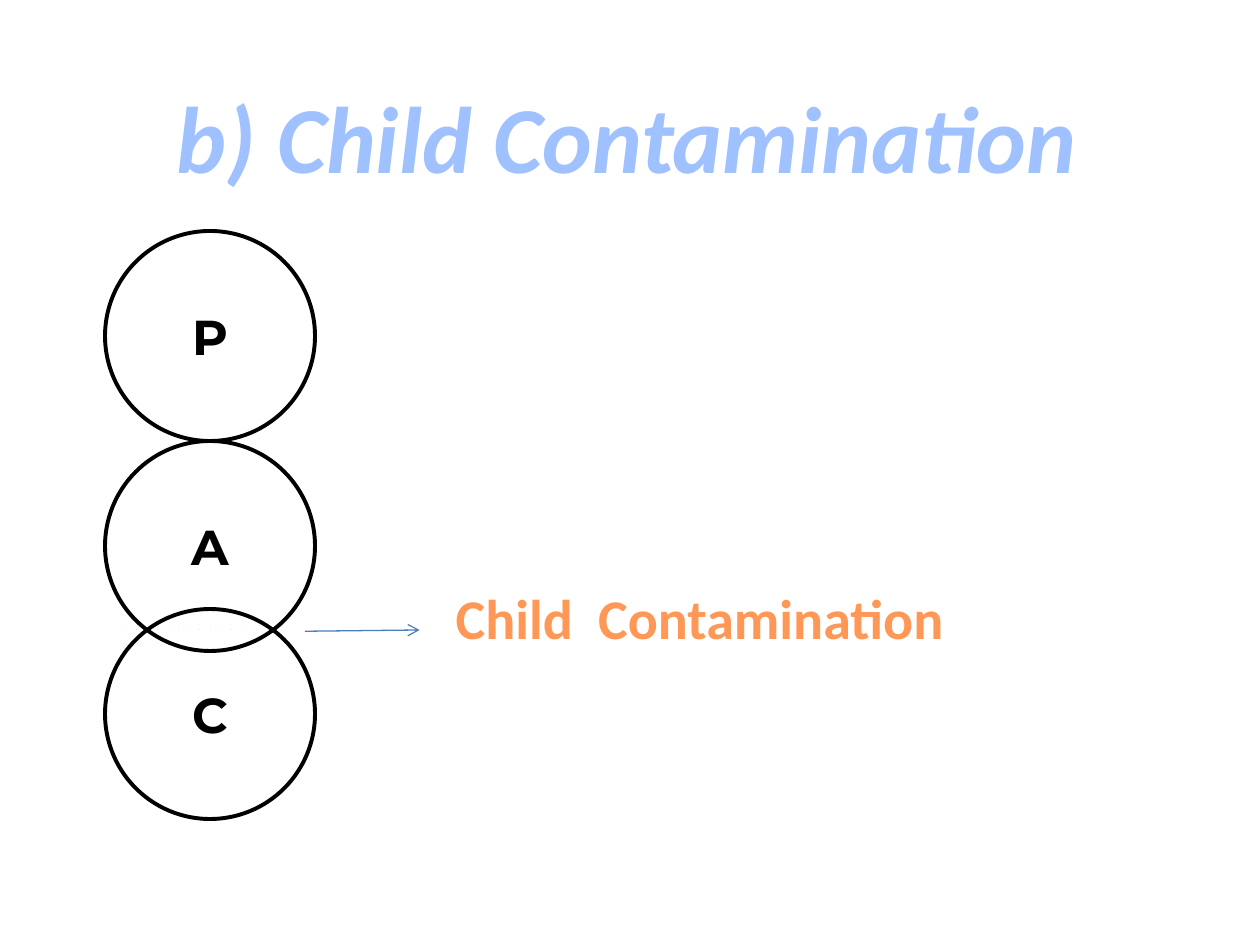
"""Builds the slide on child contamination of the Parent, Adult and Child ego states."""
from dataclasses import dataclass
from math import asin, cos, sin, sqrt

from lxml import etree
from pptx import Presentation
from pptx import util as u
from pptx.dml.color import RGBColor
from pptx.enum import dml, shapes, text
from pptx.oxml.ns import qn


@dataclass(frozen=True)
class Font:
    name: str
    size: int
    color: str
    italic: bool = False


@dataclass(frozen=True)
class Theme:
    title: Font = Font("Calibri", 54, "A0C1FF", italic=True)
    label: Font = Font("Calibri", 32, "FF9856")
    letter: Font = Font("Montserrat", 28, "000000")
    ink: str = "000000"
    paper: str = "FFFFFF"
    arrow: str = "4B7EBC"
    outline: float = 2.25
    arrow_width: float = 0.75


@dataclass(frozen=True)
class EgoState:
    letter: str
    center_y: float


@dataclass(frozen=True)
class Caption:
    words: str
    left: float
    top: float
    width: float
    height: float
    font: Font


THEME = Theme()
RADIUS = 5 / 6
CENTER_X = 5 / 3
PARENT = EgoState("P", 8 / 3)
ADULT = EgoState("A", PARENT.center_y + 2 * RADIUS)
CHILD = EgoState("C", ADULT.center_y + 4 / 3)
CAPTIONS = (
    Caption("b) Child Contamination", 1.25, 0.58, 7.45, 1.01, THEME.title),
    Caption("Child  Contamination", 3.5, 4.58, 4.11, 0.64, THEME.label),
)


def rgb(color: str) -> RGBColor:
    return RGBColor.from_string(color)


def write(box, words: str, font: Font):
    frame = box.text_frame
    frame.word_wrap = False
    para = frame.paragraphs[0]
    para.alignment = text.PP_ALIGN.CENTER
    span = para.add_run()
    span.text = words
    span.font.name = font.name
    span.font.size = u.Pt(font.size)
    span.font.bold = True
    span.font.italic = font.italic
    span.font.color.rgb = rgb(font.color)
    return para


def add_arrow(page, start: tuple[float, float], end: tuple[float, float]) -> None:
    ends = [u.Inches(value) for value in (*start, *end)]
    arrow = page.shapes.add_connector(shapes.MSO_CONNECTOR.STRAIGHT, *ends)
    arrow.line.color.rgb = rgb(THEME.arrow)
    arrow.line.width = u.Pt(THEME.arrow_width)
    etree.SubElement(arrow.line._get_or_add_ln(), qn("a:tailEnd"), type="arrow")
    etree.SubElement(arrow._element.spPr, qn("a:effectLst"))


def add_overlap(page, upper: EgoState, lower: EgoState, steps: int = 14) -> None:
    half_gap = (lower.center_y - upper.center_y) / 2
    reach = asin(sqrt(RADIUS**2 - half_gap**2) / RADIUS)
    angles = [reach * (2 * step / steps - 1) for step in range(steps + 1)]
    top = [(CENTER_X + RADIUS * sin(a), lower.center_y - RADIUS * cos(a)) for a in angles]
    bottom = [(CENTER_X - RADIUS * sin(a), upper.center_y + RADIUS * cos(a)) for a in angles]
    builder = page.shapes.build_freeform(*top[0], scale=u.Inches(1))
    builder.add_line_segments(top[1:] + bottom[1:-1], close=True)
    overlap = builder.convert_to_shape()
    overlap.shadow.inherit = False
    overlap.line.fill.background()
    overlap.fill.patterned()
    overlap.fill.pattern = dml.MSO_PATTERN.PERCENT_20
    overlap.fill.fore_color.rgb = rgb(THEME.ink)
    overlap.fill.back_color.rgb = rgb(THEME.paper)


def add_circle(page, state: EgoState) -> None:
    size = u.Inches(2 * RADIUS)
    left, top = u.Inches(CENTER_X - RADIUS), u.Inches(state.center_y - RADIUS)
    circle = page.shapes.add_shape(shapes.MSO_SHAPE.OVAL, left, top, size, size)
    circle.shadow.inherit = False
    circle.fill.background()
    circle.line.color.rgb = rgb(THEME.ink)
    circle.line.width = u.Pt(THEME.outline)
    circle.text_frame.vertical_anchor = text.MSO_ANCHOR.MIDDLE
    para = write(circle, state.letter, THEME.letter)
    para.space_before = u.Pt(0.2 * THEME.letter.size)


def add_caption(page, caption: Caption) -> None:
    place = (caption.left, caption.top, caption.width, caption.height)
    box = page.shapes.add_textbox(*(u.Inches(value) for value in place))
    write(box, caption.words, caption.font)
    box.text_frame.auto_size = text.MSO_AUTO_SIZE.SHAPE_TO_FIT_TEXT


def main() -> None:
    deck = Presentation()
    deck.slide_width, deck.slide_height = u.Inches(10), u.Inches(7.5)
    page = deck.slides.add_slide(deck.slide_layouts[6])
    page.background.fill.solid()
    page.background.fill.fore_color.rgb = rgb(THEME.paper)
    add_arrow(page, (2.42, 5.01), (3.33, 5))
    add_overlap(page, ADULT, CHILD)
    for state in (CHILD, PARENT, ADULT):
        add_circle(page, state)
    for caption in CAPTIONS:
        add_caption(page, caption)
    deck.save("out.pptx")


if __name__ == "__main__":
    main()
